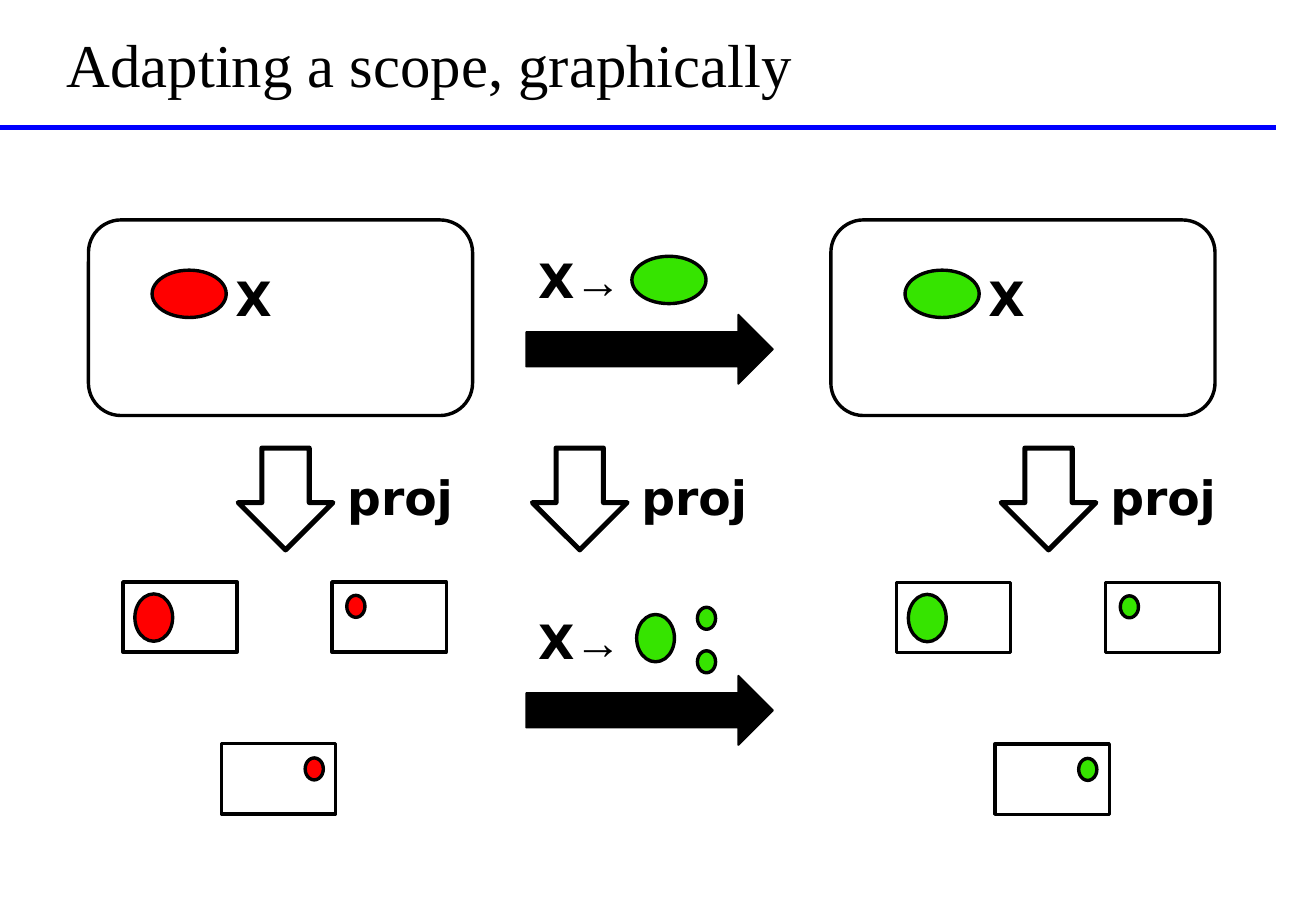
from dataclasses import dataclass

import pptx
import pptx.dml.color
import pptx.enum.shapes
import pptx.enum.text
import pptx.oxml
import pptx.util

Cm = pptx.util.Cm
Pt = pptx.util.Pt
Shape = pptx.enum.shapes.MSO_SHAPE
Anchor = pptx.enum.text.MSO_ANCHOR
Align = pptx.enum.text.PP_ALIGN


@dataclass(frozen=True)
class Theme:
    black: str = "000000"
    rule: str = "0000FF"
    red: str = "FF0000"
    green: str = "36E400"
    serif: str = "Times New Roman"
    sans: str = "DejaVu Sans"
    title_size: float = 36
    label_size: float = 28
    thin: float = 1
    outline: float = 2
    heavy: float = 3


THEME = Theme()
WIDE = (1.55, 0.99)
TALL = (0.79, 0.99)
SMALL = (0.38, 0.46)


def rgb(value):
    return pptx.dml.color.RGBColor.from_string(value)


def add_span(para, text, font=THEME.sans, size=THEME.label_size, bold=True):
    span = para.add_run()
    span.text = text
    span.font.name = font
    span.font.size = Pt(size)
    span.font.bold = bold
    span.font.color.rgb = rgb(THEME.black)


def add_label(page, left, top, width, text, arrow=""):
    box = page.shapes.add_textbox(Cm(left), Cm(top), Cm(width), Cm(1.55))
    frame = box.text_frame
    frame.word_wrap = False
    frame.auto_size = pptx.enum.text.MSO_AUTO_SIZE.SHAPE_TO_FIT_TEXT
    para = frame.paragraphs[0]
    para.line_spacing = 1.2
    para.space_before = Pt(2.4)
    add_span(para, text)
    if arrow:
        add_span(para, arrow, font=THEME.serif)


def add_figure(page, kind, left, top, size, fill=None, line=THEME.outline):
    width, height = size
    figure = page.shapes.add_shape(kind, Cm(left), Cm(top), Cm(width), Cm(height))
    figure.shadow.inherit = False
    if fill:
        figure.fill.solid()
        figure.fill.fore_color.rgb = rgb(fill)
    else:
        figure.fill.background()
    figure.line.color.rgb = rgb(THEME.black)
    figure.line.width = Pt(line)


def add_header(page, left, top, width, height):
    rule = page.shapes.add_connector(
        pptx.enum.shapes.MSO_CONNECTOR.STRAIGHT, 0, Cm(2.67), Cm(26.67), Cm(2.67)
    )
    rule.line.color.rgb = rgb(THEME.rule)
    rule.line.width = Pt(THEME.heavy)
    properties = rule._element.spPr
    properties.append(
        properties.makeelement(pptx.oxml.ns.qn("a:effectLst"), {})
    )

    title = page.shapes.title
    title.left, title.top = Cm(left), Cm(top)
    title.width, title.height = Cm(width), Cm(height)
    frame = title.text_frame
    frame.vertical_anchor = Anchor.BOTTOM
    frame.auto_size = pptx.enum.text.MSO_AUTO_SIZE.NONE
    para = frame.paragraphs[0]
    para.alignment = Align.LEFT
    add_span(para, "Adapting a scope, graphically", font=THEME.serif,
             size=THEME.title_size, bold=False)


def add_scope(page, left, top, color, indent):
    add_figure(page, Shape.ROUNDED_RECTANGLE, left, top, (8.03, 4.09))
    add_figure(page, Shape.OVAL, left + indent, top + 1.05, WIDE, fill=color)
    add_label(page, left + indent + 1.49, top + 0.67, 1.27, "X")


def add_mapping(page, left, top, ovals):
    add_label(page, left, top, 2.26, "X", arrow="→")
    for across, down, size in ovals:
        add_figure(page, Shape.OVAL, left + across, top + down, size, fill=THEME.green)
    add_figure(page, Shape.RIGHT_ARROW, left, top + 1.68, (5.16, 1.45),
               fill=THEME.black, line=THEME.thin)


def add_projection(page, left, top):
    add_figure(page, Shape.DOWN_ARROW, left, top, (1.98, 2.13), line=THEME.heavy)
    add_label(page, left + 2.03, top + 0.07, 2.79, "proj")


def add_parts(page, left, top, color):
    parts = [
        (0, 0, 0.25, 0.25, TALL),
        (4.37, 0, 0.31, 0.28, SMALL),
        (2.06, 3.38, 1.75, 0.3, SMALL),
    ]
    for across, down, inset, drop, size in parts:
        x, y = left + across, top + down
        add_figure(page, Shape.RECTANGLE, x, y, (2.39, 1.47))
        add_figure(page, Shape.OVAL, x + inset, y + drop, size, fill=color)


def main():
    deck = pptx.Presentation()
    deck.slide_width, deck.slide_height = Cm(27.51), Cm(19.05)
    page = deck.slides.add_slide(deck.slide_layouts[5])

    add_header(page, 1.14, 0.46, 25, 1.75)
    add_scope(page, 1.85, 4.6, THEME.red, 1.33)
    add_scope(page, 17.37, 4.6, THEME.green, 1.55)
    add_mapping(page, 11, 4.9, [(2.21, 0.46, WIDE)])
    add_mapping(page, 11, 12.45, [
        (2.31, 0.4, TALL), (3.58, 0.25, SMALL), (3.58, 1.16, SMALL),
    ])
    for left in (4.98, 11.13, 20.93):
        add_projection(page, left, 9.37)
    add_parts(page, 2.57, 12.17, THEME.red)
    add_parts(page, 18.74, 12.18, THEME.green)

    deck.save("out.pptx")


if __name__ == "__main__":
    main()
